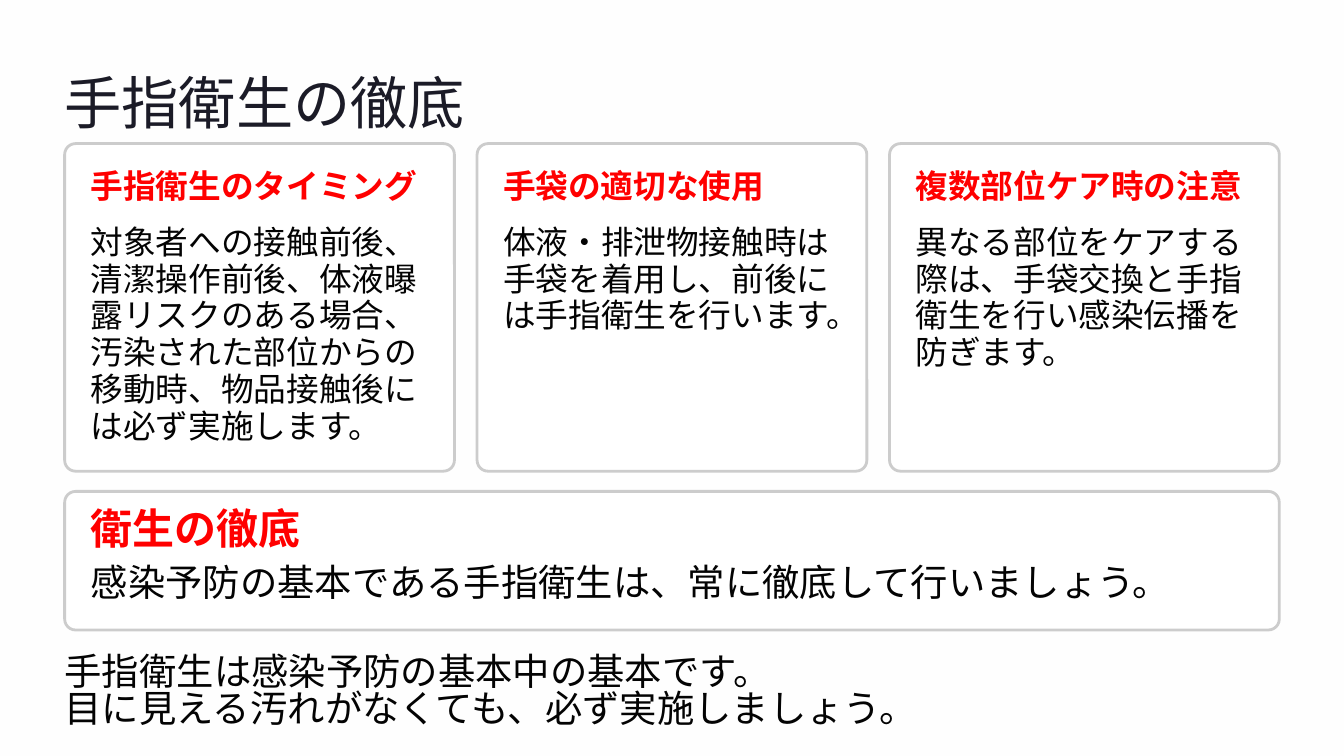
from dataclasses import dataclass

from pptx import Presentation
from pptx.dml.color import RGBColor
from pptx.enum.shapes import MSO_SHAPE
from pptx.enum.text import MSO_ANCHOR, MSO_AUTO_SIZE, PP_ALIGN
from pptx.util import Inches, Pt

COLORS = {
    "back": "FEFEFE",
    "card": "FFFFFF",
    "border": "CCCCCC",
    "title": "1B1B27",
    "heading": "FF0000",
    "body": "030303",
}

# Three-column grid, in inches
MARGIN, COL_W, GUTTER = 0.77, 4.64, 0.27
FULL_W = 3 * COL_W + 2 * GUTTER
PAD = 0.31
CARD_TOP, CARD_H = 1.71, 3.9
BANNER_TOP, BANNER_H = 5.85, 1.65
HEADING_W = 3.44
CORNER = 0.13


@dataclass(frozen=True)
class Style:
    size: float
    font: str
    color: str
    leading: float
    bold: bool = False


TITLE = Style(49, "Inter", "title", 61.5)
CARD_HEADING = Style(28, "Inter", "heading", 30.5, True)
CARD_BODY = Style(28, "Lato", "body", 31.5)
BANNER_HEADING = Style(36, "Inter", "heading", 30.5, True)
WIDE_BODY = Style(32, "Lato", "body", 31.5)


@dataclass(frozen=True)
class Card:
    heading: str
    body: str
    body_h: float


CARDS = [
    Card("手指衛生のタイミング",
         "対象者への接触前後、清潔操作前後、体液曝露リスクのある場合、"
         "汚染された部位からの移動時、物品接触後には必ず実施します。", 2.2),
    Card("手袋の適切な使用",
         "体液・排泄物接触時は手袋を着用し、前後には手指衛生を行います。", 1.32),
    Card("複数部位ケア時の注意",
         "異なる部位をケアする際は、手袋交換と手指衛生を行い感染伝播を防ぎます。", 1.32),
]


def rgb(name: str) -> RGBColor:
    return RGBColor.from_string(COLORS[name])


def fill_text(sp, lines: list[str], style: Style, wrap: bool = False) -> None:
    tf = sp.text_frame
    frame_format = {
        "margin_left": 0, "margin_right": 0, "margin_top": 0, "margin_bottom": 0,
        "auto_size": MSO_AUTO_SIZE.NONE, "vertical_anchor": MSO_ANCHOR.TOP,
        "word_wrap": wrap,
    }
    for name, value in frame_format.items():
        setattr(tf, name, value)
    for i, line in enumerate(lines):
        p = tf.add_paragraph() if i else tf.paragraphs[0]
        p.alignment = PP_ALIGN.LEFT
        p.line_spacing = Pt(style.leading)
        r = p.add_run()
        r.text = line
        run_format = {"size": Pt(style.size), "name": style.font, "bold": style.bold}
        for name, value in run_format.items():
            setattr(r.font, name, value)
        r.font.color.rgb = rgb(style.color)


def add_text(s, x: float, y: float, w: float, h: float,
             lines: list[str], style: Style, wrap: bool = False) -> None:
    sp = s.shapes.add_textbox(Inches(x), Inches(y), Inches(w), Inches(h))
    fill_text(sp, lines, style, wrap)


def add_panel(s, x: float, y: float, w: float, h: float) -> None:
    sp = s.shapes.add_shape(MSO_SHAPE.ROUNDED_RECTANGLE,
                            Inches(x), Inches(y), Inches(w), Inches(h))
    sp.adjustments[0] = CORNER / min(w, h)
    sp.shadow.inherit = False
    sp.fill.solid()
    sp.fill.fore_color.rgb = rgb("card")
    sp.line.color.rgb = rgb("border")
    sp.line.width = Pt(2.4)


def add_card(s, column: int, card: Card) -> None:
    x = MARGIN + column * (COL_W + GUTTER)
    add_panel(s, x, CARD_TOP, COL_W, CARD_H)
    add_text(s, x + PAD, CARD_TOP + PAD, HEADING_W, 0.49, [card.heading], CARD_HEADING)
    add_text(s, x + PAD, CARD_TOP + 0.96, COL_W - 2 * PAD, card.body_h,
             [card.body], CARD_BODY, wrap=True)


def add_banner(s) -> None:
    x = MARGIN + PAD
    add_panel(s, MARGIN, BANNER_TOP, FULL_W, BANNER_H)
    add_text(s, x, BANNER_TOP + PAD, HEADING_W, 0.43, ["衛生の徹底"], BANNER_HEADING)
    add_text(s, x, BANNER_TOP + 0.9, FULL_W - 2 * PAD, 0.44,
             ["感染予防の基本である手指衛生は、常に徹底して行いましょう。"], WIDE_BODY)


def main() -> None:
    prs = Presentation()
    prs.slide_width, prs.slide_height = Inches(16), Inches(9)
    s = prs.slides.add_slide(prs.slide_layouts[5])
    s.background.fill.solid()
    s.background.fill.fore_color.rgb = rgb("back")

    title = s.shapes.title
    title_box = {"left": MARGIN, "top": 0.76, "width": 6.87, "height": 0.86}
    for name, value in title_box.items():
        setattr(title, name, Inches(value))
    fill_text(title, ["手指衛生の徹底"], TITLE)

    for column, card in enumerate(CARDS):
        add_card(s, column, card)
    add_banner(s)
    add_text(s, MARGIN, 7.81, FULL_W, 0.44,
             ["手指衛生は感染予防の基本中の基本です。",
              "目に見える汚れがなくても、必ず実施しましょう。"], WIDE_BODY)
    prs.save("out.pptx")


if __name__ == "__main__":
    main()
